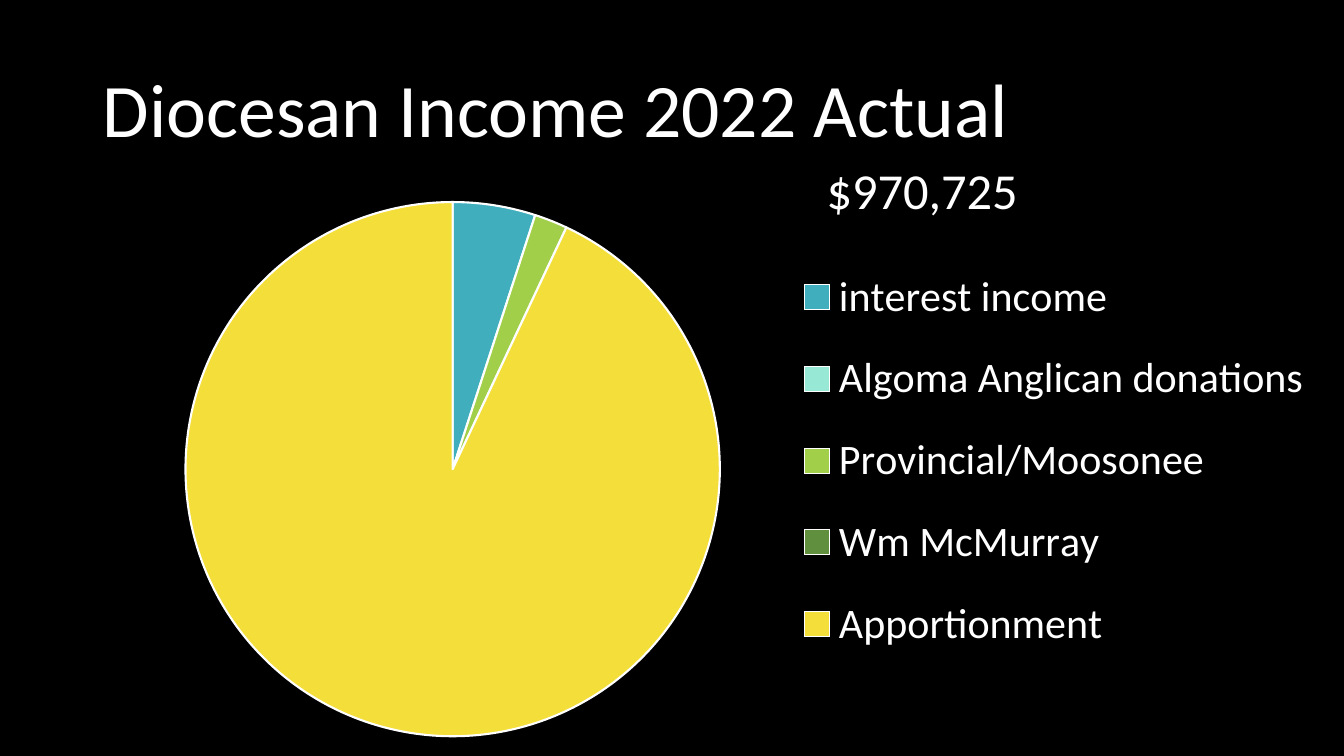
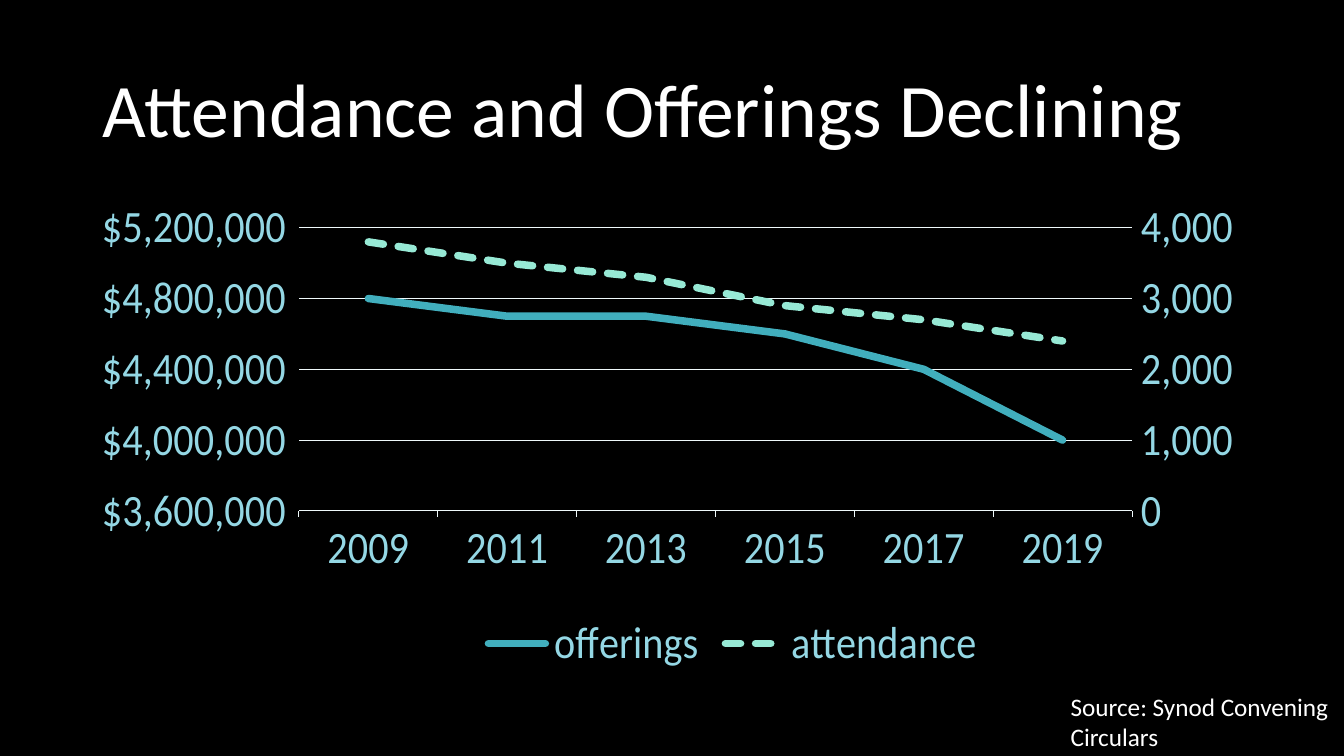
from copy import deepcopy
from dataclasses import dataclass
from typing import Any

from lxml import etree
from pptx import Presentation
from pptx.chart.axis import ValueAxis
from pptx.chart.chart import Chart
from pptx.chart.data import CategoryChartData
from pptx.dml.color import RGBColor
from pptx.enum.chart import XL_CHART_TYPE as ChartType
from pptx.enum.chart import XL_LEGEND_POSITION as LegendPosition
from pptx.enum.chart import XL_TICK_MARK as TickMark
from pptx.enum.dml import MSO_LINE_DASH_STYLE as Dash
from pptx.enum.text import MSO_ANCHOR as Anchor
from pptx.enum.text import MSO_AUTO_SIZE as AutoSize
from pptx.enum.text import PP_ALIGN as Align
from pptx.oxml.ns import qn
from pptx.slide import Slide
from pptx.util import Inches, Pt

FONT = "Calibri"
BLACK, WHITE = "000000", "FFFFFF"
TEAL, MINT, LIME, GREEN, YELLOW = "41AEBD", "97E9D5", "A2CF49", "608F3D", "F4DE3A"
PALE_BLUE, GRID_BLUE = "94D7E4", "EFF9FB"
DOLLARS = r'_("$"* #,##0_);_("$"* \(#,##0\);_("$"* "-"??_);_(@_)'


@dataclass(frozen=True)
class Box:
    left: float
    top: float
    width: float
    height: float

    def lengths(self) -> list[int]:
        return [Inches(n) for n in (self.left, self.top, self.width, self.height)]


@dataclass(frozen=True)
class IncomeSource:
    name: str
    percent: int
    color: str


@dataclass(frozen=True)
class Trend:
    name: str
    values: tuple[int, ...]
    color: str
    dash: Any = None


@dataclass(frozen=True)
class Scale:
    low: int
    high: int
    step: int
    number_format: str


TITLE_BOX = Box(0.92, 0.4, 11.5, 1.45)
INCOME_BOX = Box(0.21, 1.53, 13.12, 5.93)
ATTENDANCE_BOX = Box(0.92, 1.53, 11.5, 5.22)

INCOME = [
    IncomeSource("interest income", 5, TEAL),
    IncomeSource("Algoma Anglican donations", 0, MINT),
    IncomeSource("Provincial/Moosonee", 2, LIME),
    IncomeSource("Wm McMurray", 0, GREEN),
    IncomeSource("Apportionment", 93, YELLOW),
]

YEARS = [str(year) for year in range(2009, 2020, 2)]
OFFERINGS = Trend(
    "offerings", (4800000, 4700000, 4700000, 4600000, 4400000, 4000000), TEAL
)
ATTENDANCE = Trend(
    "attendance", (3800, 3500, 3300, 2900, 2700, 2400), MINT, Dash.SQUARE_DOT
)
OFFERING_SCALE = Scale(3600000, 5200000, 400000, DOLLARS)
ATTENDANCE_SCALE = Scale(0, 4000, 1000, "#,##0")


def rgb(color: str) -> RGBColor:
    return RGBColor.from_string(color)


def set_all(target: Any, formats: dict[str, Any]) -> None:
    for name, value in formats.items():
        setattr(target, name, value)


def set_font(font: Any, size: float, color: str) -> None:
    set_all(font, {"name": FONT, "size": Pt(size), "bold": False})
    font.color.rgb = rgb(color)


def set_line(line: Any, color: str, width: float) -> None:
    line.color.rgb = rgb(color)
    line.width = Pt(width)


def add_titled_slide(prs: Any, heading: str) -> Slide:
    slide = prs.slides.add_slide(prs.slide_layouts[5])
    title = slide.shapes.title
    keys = ("left", "top", "width", "height")
    set_all(title, dict(zip(keys, TITLE_BOX.lengths())))
    frame = title.text_frame
    frame.text = heading
    set_all(frame, {"vertical_anchor": Anchor.MIDDLE, "auto_size": AutoSize.NONE,
                    "word_wrap": True})
    set_all(frame.paragraphs[0], {"alignment": Align.LEFT, "line_spacing": 0.9})
    set_font(frame.paragraphs[0].font, 54, WHITE)
    return slide


def add_caption(slide: Slide, text: str, box: Box, size: float) -> None:
    frame = slide.shapes.add_textbox(*box.lengths()).text_frame
    frame.text = text
    set_all(frame, {"word_wrap": True, "auto_size": AutoSize.SHAPE_TO_FIT_TEXT})
    set_font(frame.paragraphs[0].font, size, WHITE)


def set_layout(parent: Any, index: int, area: Box, chart_box: Box,
               inner: bool = False) -> None:
    """Place a plot area or legend, in inches from the chart's corner."""
    for old in parent.findall(qn("c:layout")):
        parent.remove(old)
    layout = etree.Element(qn("c:layout"))
    manual = etree.SubElement(layout, qn("c:manualLayout"))
    settings = {"layoutTarget": "inner"} if inner else {}
    settings |= {"xMode": "edge", "yMode": "edge",
                 "x": area.left / chart_box.width,
                 "y": area.top / chart_box.height,
                 "w": area.width / chart_box.width,
                 "h": area.height / chart_box.height}
    for tag, value in settings.items():
        etree.SubElement(manual, qn(f"c:{tag}")).set("val", str(value))
    parent.insert(index, layout)


def add_chart(slide: Slide, kind: Any, box: Box, data: CategoryChartData,
              plot_area: Box) -> Chart:
    chart = slide.shapes.add_chart(kind, *box.lengths(), data).chart
    chart.has_title = False
    set_font(chart.font, 10, WHITE)
    set_layout(chart.plots[0]._element.getparent(), 0, plot_area, box, inner=True)
    return chart


def add_legend(chart: Chart, position: Any, size: float, color: str) -> None:
    chart.has_legend = True
    set_all(chart.legend, {"position": position, "include_in_layout": False})
    set_font(chart.legend.font, size, color)


def set_scale(axis: ValueAxis, scale: Scale) -> None:
    set_all(axis, {"minimum_scale": scale.low, "maximum_scale": scale.high,
                   "major_unit": scale.step})
    set_all(axis.tick_labels, {"number_format": scale.number_format,
                               "number_format_is_linked": False})


def move_to_right_axis(chart: Chart, scale: Scale) -> None:
    """Give the last series its own plot and a value axis on the right."""
    left_plot = chart.plots[0]._element
    right_plot = deepcopy(left_plot)
    left_plot.remove(left_plot.findall(qn("c:ser"))[-1])
    right_plot.remove(right_plot.findall(qn("c:ser"))[0])
    left_plot.addnext(right_plot)

    years = deepcopy(chart.category_axis._element)
    amounts = deepcopy(chart.value_axis._element)
    chart.value_axis._element.addnext(amounts)
    amounts.addnext(years)
    ids = ("50010", "50020")
    for reference, axis_id in zip(right_plot.findall(qn("c:axId")), ids):
        reference.set("val", axis_id)
    for axis, axis_id, crossed_id in zip((years, amounts), ids, reversed(ids)):
        axis.find(qn("c:axId")).set("val", axis_id)
        axis.find(qn("c:crossAx")).set("val", crossed_id)
    years.find(qn("c:delete")).set("val", "1")
    amounts.find(qn("c:axPos")).set("val", "r")
    amounts.find(qn("c:crosses")).set("val", "max")
    right_axis = ValueAxis(amounts)
    set_all(right_axis, {"has_major_gridlines": False,
                         "major_tick_mark": TickMark.OUTSIDE})
    set_scale(right_axis, scale)


def build_income(prs: Any) -> None:
    slide = add_titled_slide(prs, "Diocesan Income 2022 Actual")
    data = CategoryChartData()
    data.categories = [source.name for source in INCOME]
    data.add_series("Series 1", [source.percent for source in INCOME])
    chart = add_chart(slide, ChartType.PIE, INCOME_BOX, data,
                      Box(1.63, 0.47, 5.3, 5.31))
    chart.plots[0].vary_by_categories = True
    for index, source in enumerate(INCOME):
        wedge = chart.plots[0].series[0].points[index].format
        wedge.fill.solid()
        wedge.fill.fore_color.rgb = rgb(source.color)
        set_line(wedge.line, WHITE, 1.5)
    add_legend(chart, LegendPosition.RIGHT, 30, WHITE)
    set_layout(chart.legend._element, 1, Box(7.62, 0.86, 5.25, 4.36), INCOME_BOX)
    add_caption(slide, "$970,725", Box(8.1, 1.53, 2.19, 0.71), 36)


def build_attendance(prs: Any) -> None:
    slide = add_titled_slide(prs, "Attendance and Offerings Declining")
    trends = (OFFERINGS, ATTENDANCE)
    data = CategoryChartData()
    data.categories = YEARS
    for trend in trends:
        data.add_series(trend.name, trend.values)
    chart = add_chart(slide, ChartType.LINE, ATTENDANCE_BOX, data,
                      Box(0.95, 0.73, 9.22, 2.81))
    chart.plots[0].vary_by_categories = False
    for trend, series in zip(trends, chart.plots[0].series):
        series.smooth = False
        line = series.format.line
        set_line(line, trend.color, 6)
        if trend.dash:
            line.dash_style = trend.dash
        series._element.find(qn("c:spPr")).find(qn("a:ln")).set("cap", "rnd")

    years, amounts = chart.category_axis, chart.value_axis
    for axis in (years, amounts):
        set_font(axis.tick_labels.font, 32, PALE_BLUE)
        axis.minor_tick_mark = TickMark.NONE
    years.major_tick_mark = TickMark.OUTSIDE
    amounts.major_tick_mark = TickMark.NONE
    amounts.has_major_gridlines = True
    for line in (years.format.line, amounts.major_gridlines.format.line):
        set_line(line, GRID_BLUE, 0.75)
    amounts.format.line.fill.background()
    set_scale(amounts, OFFERING_SCALE)
    add_legend(chart, LegendPosition.BOTTOM, 32, PALE_BLUE)
    move_to_right_axis(chart, ATTENDANCE_SCALE)
    add_caption(slide, "Source: Synod Convening Circulars",
                Box(10.52, 6.81, 2.81, 0.71), 18)


def main() -> None:
    prs = Presentation()
    set_all(prs, {"slide_width": Inches(13.33), "slide_height": Inches(7.5)})
    backdrop = prs.slide_master.background.fill
    backdrop.solid()
    backdrop.fore_color.rgb = rgb(BLACK)
    build_income(prs)
    build_attendance(prs)
    prs.save("out.pptx")


if __name__ == "__main__":
    main()
